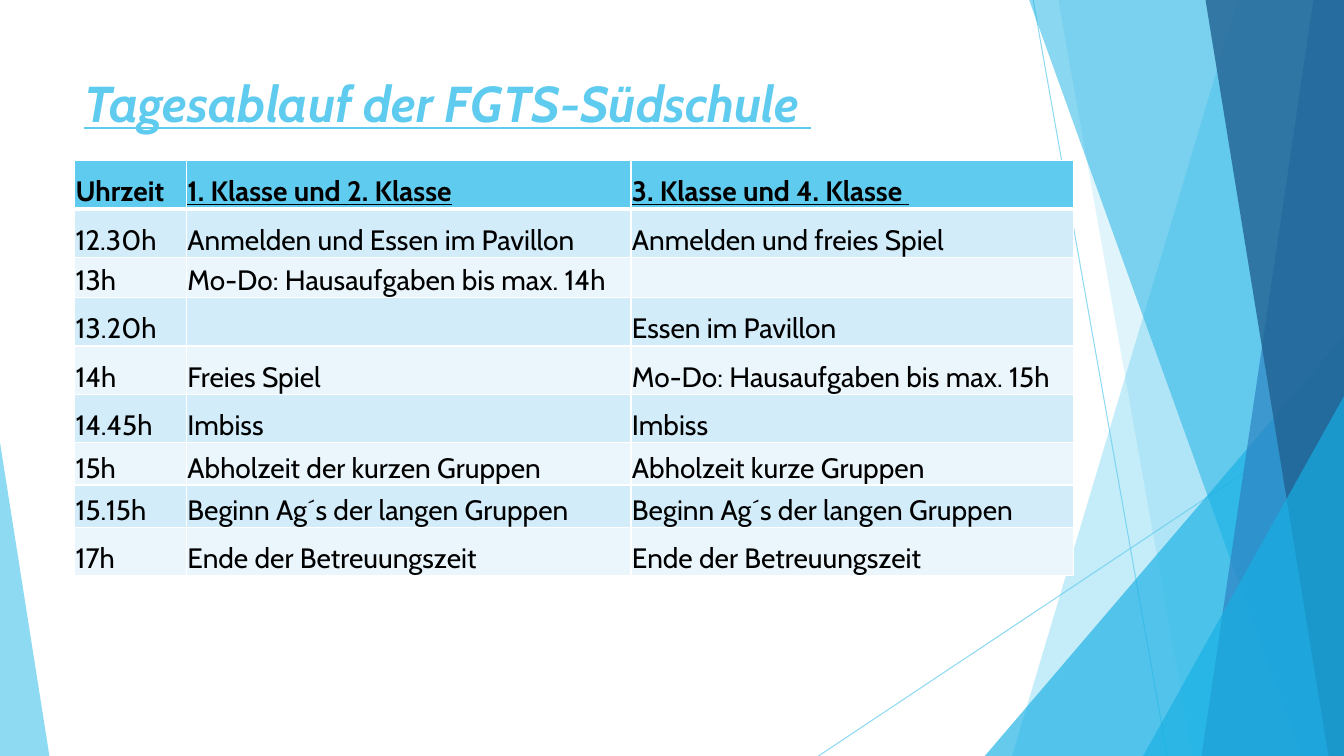
from dataclasses import dataclass

from lxml import etree
from pptx import Presentation
from pptx.dml.color import RGBColor
from pptx.enum.shapes import MSO_CONNECTOR, MSO_SHAPE
from pptx.enum.text import MSO_ANCHOR
from pptx.oxml.ns import qn
from pptx.util import Pt

STRAIGHT = MSO_CONNECTOR.STRAIGHT
TRIANGLE = MSO_SHAPE.ISOSCELES_TRIANGLE
TOP, BOTTOM = MSO_ANCHOR.TOP, MSO_ANCHOR.BOTTOM


@dataclass(frozen=True)
class Theme:
    font: str = "Cabin"
    title_size: int = 36
    table_size: int = 20
    sky: str = "5FCBEF"
    cyan: str = "17B0E4"
    blue: str = "2E83C3"
    navy: str = "226292"
    odd_row: str = "D2ECF9"
    even_row: str = "EAF6FC"
    grid: str = "FFFFFF"
    text: str = "000000"


THEME = Theme()
WIDTH, HEIGHT = 960, 540

TITLE = "Tagesablauf der FGTS-Südschule "
TITLE_BOX = (53.28, 48.24, 676.8, 103.68)

SCHEDULE = [
    ("Uhrzeit", "1. Klasse und 2. Klasse", "3. Klasse und 4. Klasse "),
    ("12.30h", "Anmelden und Essen im Pavillon", "Anmelden und freies Spiel"),
    ("13h", "Mo-Do: Hausaufgaben bis max. 14h", ""),
    ("13.20h", "", "Essen im Pavillon"),
    ("14h", "Freies Spiel", "Mo-Do: Hausaufgaben bis max. 15h"),
    ("14.45h", "Imbiss", "Imbiss"),
    ("15h", "Abholzeit der kurzen Gruppen", "Abholzeit kurze Gruppen"),
    ("15.15h", "Beginn Ag´s der langen Gruppen", "Beginn Ag´s der langen Gruppen"),
    ("17h", "Ende der Betreuungszeit", "Ende der Betreuungszeit"),
]
TABLE_LEFT, TABLE_TOP = 53.28, 114.7
COLUMN_WIDTHS = (79.92, 317.52, 316.08)
ROW_HEIGHTS = (34.56, 34.56, 28.8, 34.56, 34.56, 34.56, 30.24, 30.24, 34.56)
CELL_INSET = 0.72
GRID_WIDTH, HEADER_RULE_WIDTH = 1, 3

# Start and end of each thin ray
RAYS = [((738, 0), (833.76, HEIGHT)), ((WIDTH, 290.16), (584.64, HEIGHT))]

# Back to front. Bands: left edge at top and bottom, reaching the right slide edge.
# Wedges: left, top, width, apex position, standing on the bottom slide edge.
FACETS = [
    ("band", (884.16, 722.88), THEME.sky, 36),
    ("band", (756, 851.76), THEME.sky, 20),
    ("wedge", (703.44, 239.76, 256.56, 1), THEME.cyan, 66),
    ("band", (735.12, 929.52), THEME.cyan, 50),
    ("band", (938.16, 858.24), THEME.blue, 70),
    ("band", (861.12, 948.96), THEME.navy, 80),
    ("wedge", (816.48, 282.96, 143.52, 1), THEME.cyan, 66),
    ("wedge", (0, 316.08, 35.28, 0), THEME.sky, 70),
]


def rgb(color):
    return RGBColor.from_string(color)


def set_opacity(shape, percent):
    for color in shape.element.spPr.iter(qn("a:srgbClr")):
        etree.SubElement(color, qn("a:alpha"), val=str(percent * 1000))


def add_ray(shapes, start, end):
    ray = shapes.add_connector(STRAIGHT, *map(Pt, start + end))
    ray.line.color.rgb = rgb(THEME.sky)
    ray.line.width = Pt(0.75)
    set_opacity(ray, 70)
    etree.SubElement(ray.element.spPr, qn("a:effectLst"))


def add_band(shapes, top_x, bottom_x):
    builder = shapes.build_freeform(Pt(top_x), 0)
    corners = [(WIDTH, 0), (WIDTH, HEIGHT), (bottom_x, HEIGHT)]
    builder.add_line_segments([(Pt(x), Pt(y)) for x, y in corners], close=True)
    return builder.convert_to_shape()


def add_wedge(shapes, left, top, width, apex):
    wedge = shapes.add_shape(TRIANGLE, Pt(left), Pt(top), Pt(width), Pt(HEIGHT - top))
    wedge.adjustments[0] = apex
    return wedge


def add_backdrop(shapes):
    for start, end in RAYS:
        add_ray(shapes, start, end)
    builders = {"band": add_band, "wedge": add_wedge}
    for kind, geometry, color, opacity in FACETS:
        facet = builders[kind](shapes, *geometry)
        facet.fill.solid()
        facet.fill.fore_color.rgb = rgb(color)
        facet.line.fill.background()
        facet.shadow.inherit = False
        set_opacity(facet, opacity)


def style_text(paragraph, size, color, bold, italic, underline):
    font = paragraph.font
    font.name, font.size, font.color.rgb = THEME.font, Pt(size), rgb(color)
    font.bold, font.italic, font.underline = bold, italic, underline


def add_title(shapes):
    title = shapes.add_textbox(*map(Pt, TITLE_BOX)).text_frame
    title.word_wrap = True
    title.vertical_anchor = TOP
    title.text = TITLE
    style_text(title.paragraphs[0], THEME.title_size, THEME.sky, True, True, True)


def set_borders(cell, row):
    widths = {
        "a:lnL": GRID_WIDTH,
        "a:lnR": GRID_WIDTH,
        "a:lnT": HEADER_RULE_WIDTH if row == 1 else GRID_WIDTH,
        "a:lnB": HEADER_RULE_WIDTH if row == 0 else GRID_WIDTH,
    }
    properties = cell._tc.get_or_add_tcPr()
    for side, width in widths.items():
        border = etree.SubElement(properties, qn(side), w=str(Pt(width)))
        fill = etree.SubElement(border, qn("a:solidFill"))
        etree.SubElement(fill, qn("a:srgbClr"), val=THEME.grid)


def fill_cell(cell, text, row, column):
    header = row == 0
    set_borders(cell, row)
    cell.fill.solid()
    band = THEME.odd_row if row % 2 else THEME.even_row
    cell.fill.fore_color.rgb = rgb(THEME.sky if header else band)
    cell.vertical_anchor = BOTTOM
    cell.margin_left = cell.margin_right = cell.margin_top = Pt(CELL_INSET)
    cell.margin_bottom = 0
    cell.text = text
    style_text(cell.text_frame.paragraphs[0], THEME.table_size, THEME.text,
               header, False, header and column > 0)


def add_schedule(shapes):
    table = shapes.add_table(
        len(SCHEDULE), len(COLUMN_WIDTHS), Pt(TABLE_LEFT), Pt(TABLE_TOP),
        Pt(sum(COLUMN_WIDTHS)), Pt(sum(ROW_HEIGHTS))).table
    for column, width in zip(table.columns, COLUMN_WIDTHS):
        column.width = Pt(width)
    for table_row, height in zip(table.rows, ROW_HEIGHTS):
        table_row.height = Pt(height)
    for row, entries in enumerate(SCHEDULE):
        for column, text in enumerate(entries):
            fill_cell(table.cell(row, column), text, row, column)


def main():
    presentation = Presentation()
    presentation.slide_width, presentation.slide_height = Pt(WIDTH), Pt(HEIGHT)
    shapes = presentation.slides.add_slide(presentation.slide_layouts[6]).shapes
    add_backdrop(shapes)
    add_title(shapes)
    add_schedule(shapes)
    presentation.save("out.pptx")


if __name__ == "__main__":
    main()
